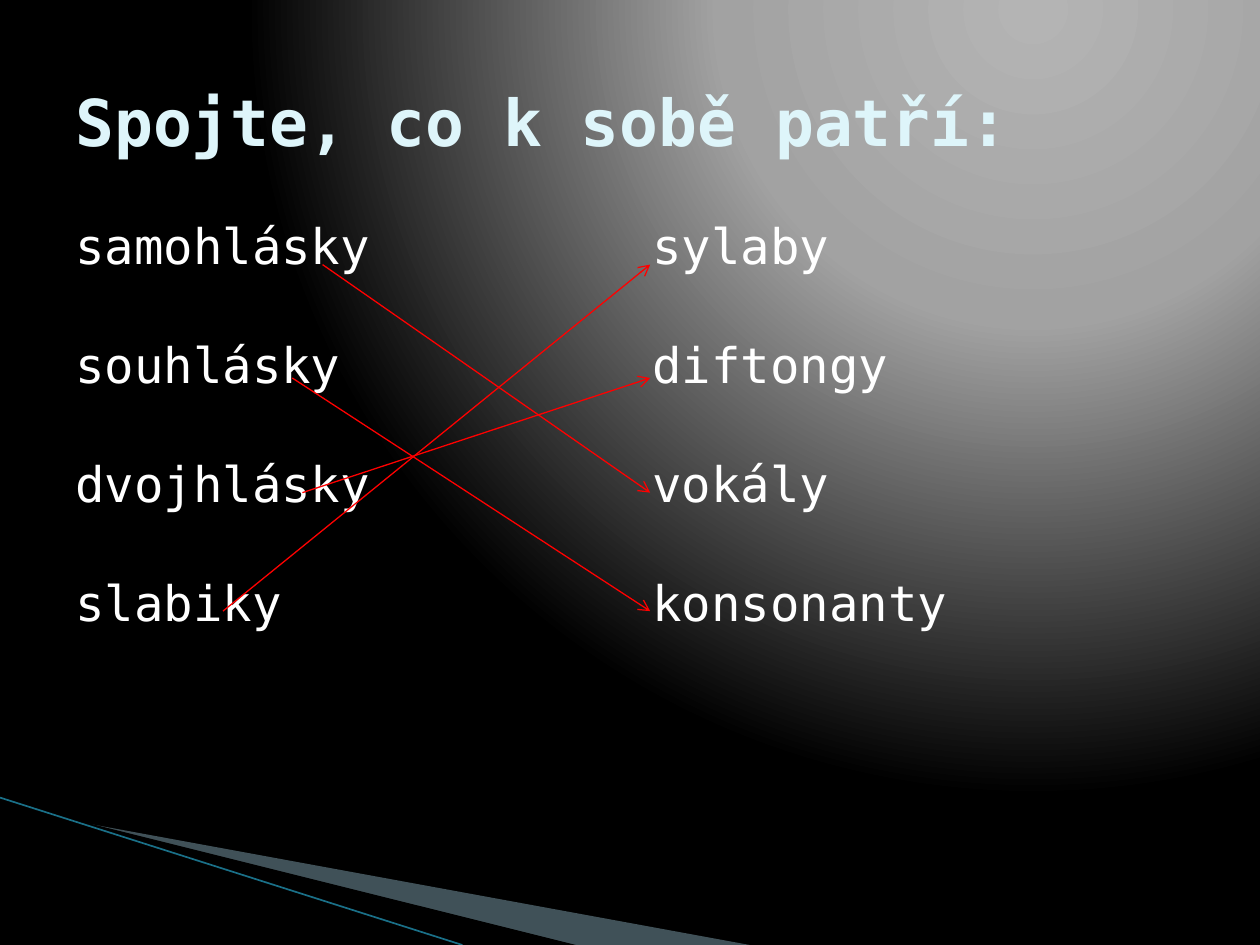
from lxml import etree
from pptx import Presentation
from pptx.dml.color import RGBColor
from pptx.enum.shapes import MSO_CONNECTOR
from pptx.enum.text import MSO_ANCHOR
from pptx.oxml import parse_xml
from pptx.oxml.ns import qn
from pptx.util import Inches, Pt

LINE = MSO_CONNECTOR.STRAIGHT
MIDDLE = MSO_ANCHOR.MIDDLE
TOP = MSO_ANCHOR.TOP
FONT = "DejaVu Sans Mono"
NS = "http://schemas.openxmlformats.org/drawingml/2006/main"
COLORS = {"title": "DEF5FA", "text": "FFFFFF", "arrow": "FF0000",
          "wedge": "A0CBDC", "shade": "000000", "edge": "1A7088"}


def add_text(box, lines, size, color, anchor=TOP, bold=False, gap=0):
    frame = slide.shapes.add_textbox(*[Inches(n) for n in box]).text_frame
    frame.word_wrap = True
    frame.vertical_anchor = anchor
    frame.text = "\n".join(lines)
    for i, para in enumerate(frame.paragraphs):
        para.space_before = Pt(gap if i else 0)
        font = para.runs[0].font
        font.name, font.size, font.bold = FONT, Pt(size), bold
        font.color.rgb = RGBColor.from_string(COLORS[color])


def add_line(start, end, color, width):
    line = slide.shapes.add_connector(LINE, *[Inches(n) for n in start + end])
    line.line.color.rgb = RGBColor.from_string(COLORS[color])
    line.line.width = Pt(width)
    etree.SubElement(line._element.spPr, qn("a:effectLst"))
    return line


prs = Presentation()
prs.slide_width, prs.slide_height = Inches(10), Inches(7.5)
slide = prs.slides.add_slide(prs.slide_layouts[6])

# Radial background, bright at the upper right
fill = slide.background.fill
fill.solid()
solid = slide.element.find(".//" + qn("a:solidFill"))
stops = "".join(
    f'<a:gs pos="{pos * 1000}"><a:srgbClr val="{color}"/></a:gs>'
    for pos, color in [(0, "B4B4B4"), (40, "A2A2A2"), (100, "000000")])
solid.getparent().replace(solid, parse_xml(
    f'<a:gradFill xmlns:a="{NS}" rotWithShape="1"><a:gsLst>{stops}</a:gsLst>'
    '<a:path path="circle">'
    '<a:fillToRect l="65000" t="0" r="0" b="98000"/></a:path></a:gradFill>'))

# Corner wedges: points, colour, opacity in percent
wedges = [
    ([(0.55, 6.51), (5.95, 7.5), (4.56, 7.5), (0.55, 6.5)], "wedge", 40),
    ([(0.53, 6.49), (4.57, 7.5), (3.72, 7.5), (0.54, 6.5)], "shade", 100),
]
for points, color, alpha in wedges:
    spots = [(Inches(x), Inches(y)) for x, y in points]
    form = slide.shapes.build_freeform(*spots[0])
    form.add_line_segments(spots[1:], close=True)
    wedge = form.convert_to_shape()
    wedge.shadow.inherit = False
    wedge.line.fill.background()
    wedge.fill.solid()
    wedge.fill.fore_color.rgb = RGBColor.from_string(COLORS[color])
    tint = wedge._element.spPr.find(".//" + qn("a:srgbClr"))
    etree.SubElement(tint, qn("a:alpha"), val=str(alpha * 1000))
add_line((0, 6.33), (3.67, 7.5), "edge", 0.95)

# Title and the two word columns
add_text((0.5, 0.33, 9, 1.25), ["Spojte, co k\u00a0sobě patří:"], 36.9, "title",
         MIDDLE, bold=True)
columns = [
    (0.5, ["samohlásky", "souhlásky", "dvojhlásky", "slabiky"]),
    (5.08, ["sylaby", "diftongy", "vokály", "konsonanty"]),
]
for left, words in columns:
    add_text((left, 1.66, 4.42, 4.9), words, 28, "text", gap=34.5)

# Arrows: start x, row on the left, row on the right
rows = [2.1, 3, 3.91, 4.85]
for left, start, end in [(2.56, 0, 2), (2.4, 2, 1), (2.32, 1, 3), (1.77, 3, 0)]:
    arrow = add_line((left, rows[start]), (5.16, rows[end]), "arrow", 0.75)
    etree.SubElement(arrow.line._get_or_add_ln(), qn("a:tailEnd"), type="arrow")

prs.save("out.pptx")
